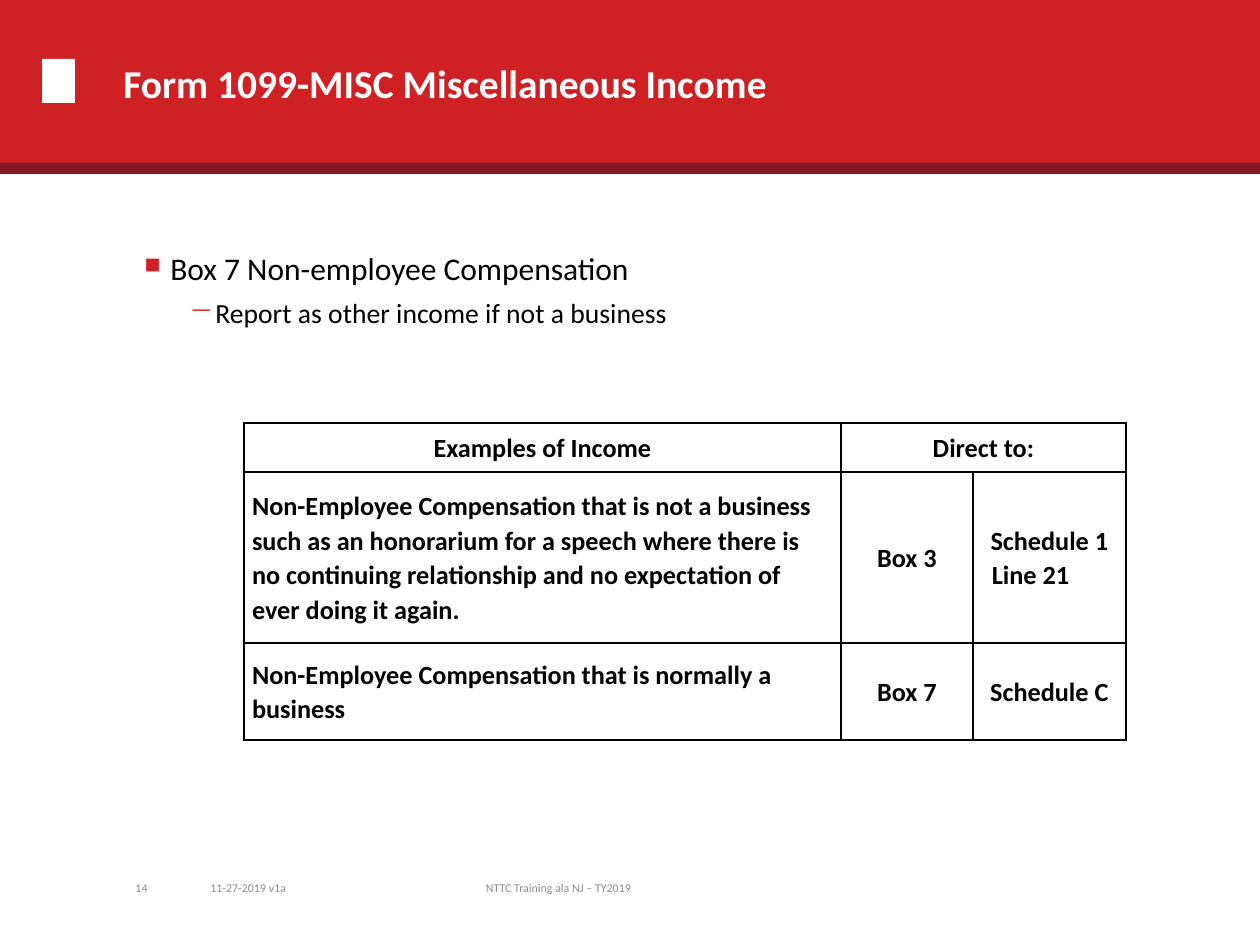
from dataclasses import dataclass

from lxml import etree
from pptx import Presentation
from pptx.dml.color import RGBColor
from pptx.enum.shapes import MSO_SHAPE
from pptx.enum.text import MSO_ANCHOR, PP_ALIGN
from pptx.oxml.ns import qn
from pptx.util import Emu, Pt

RECTANGLE = MSO_SHAPE.RECTANGLE
MIDDLE = MSO_ANCHOR.MIDDLE
TOP = MSO_ANCHOR.TOP
LEFT = PP_ALIGN.LEFT
CENTER = PP_ALIGN.CENTER
RIGHT = PP_ALIGN.RIGHT
EMU_PER_PIXEL = 914400 / 126
BLANK_LAYOUT = 6


@dataclass(frozen=True)
class Theme:
    font: str = "Calibri"
    red: str = "CF2124"
    dark_red: str = "841721"
    white: str = "FFFFFF"
    black: str = "000000"
    gray: str = "8C8C8C"
    title_size: float = 22.5
    body_size: float = 18
    detail_size: float = 15.8
    table_size: float = 15
    footer_size: float = 6.8
    table_line_spacing: float = 1.07
    border_width: float = 1


def px(value):
    return Emu(round(value * EMU_PER_PIXEL))


def set_all(target, values):
    for name, value in values.items():
        setattr(target, name, value)


def add_element(parent, tag, **attributes):
    values = {name: str(value) for name, value in attributes.items()}
    return etree.SubElement(parent, qn(tag), values)


class SlideBuilder:
    def __init__(self, slide, theme):
        self.slide = slide
        self.theme = theme

    def rectangle(self, box, color):
        shape = self.slide.shapes.add_shape(RECTANGLE, *map(px, box))
        shape.shadow.inherit = False
        shape.fill.solid()
        shape.fill.fore_color.rgb = RGBColor.from_string(color)
        shape.line.fill.background()

    def text_frame(self, box, anchor=MIDDLE):
        frame = self.slide.shapes.add_textbox(*map(px, box)).text_frame
        set_all(frame, {"word_wrap": True, "vertical_anchor": anchor})
        return frame

    def style_text(self, paragraph, text, size, color, bold=False, **formats):
        paragraph.text = text
        set_all(paragraph, formats)
        set_all(paragraph.font, {"name": self.theme.font, "size": Pt(size), "bold": bold})
        paragraph.font.color.rgb = RGBColor.from_string(color)

    def label(self, box, text, size, color, bold=False, alignment=LEFT):
        paragraph = self.text_frame(box).paragraphs[0]
        self.style_text(paragraph, text, size, color, bold, alignment=alignment)

    def indent(self, paragraph, margin, hanging=0):
        properties = paragraph._p.get_or_add_pPr()
        properties.set("marL", str(px(margin)))
        properties.set("indent", str(px(-hanging)))
        return properties

    def bullets(self, box, items):
        frame = self.text_frame(box, TOP)
        for index, (text, size, level, margin, character, percent, space) in enumerate(items):
            paragraph = frame.add_paragraph() if index else frame.paragraphs[0]
            properties = self.indent(paragraph, margin, 26)
            color = add_element(properties, "a:buClr")
            add_element(color, "a:srgbClr", val=self.theme.red)
            add_element(properties, "a:buSzPct", val=percent * 1000)
            add_element(properties, "a:buChar", char=character)
            self.style_text(paragraph, text, size, self.theme.black,
                            level=level, space_before=Pt(space))

    def border(self, cell):
        properties = cell._tc.get_or_add_tcPr()
        for side in ("a:lnL", "a:lnR", "a:lnT", "a:lnB"):
            line = add_element(properties, side, w=Pt(self.theme.border_width))
            fill = add_element(line, "a:solidFill")
            add_element(fill, "a:srgbClr", val=self.theme.black)

    def cell(self, cell, lines, alignment):
        self.border(cell)
        cell.fill.background()
        set_all(cell, {"vertical_anchor": MIDDLE, "margin_left": px(8), "margin_right": px(8),
                       "margin_top": 0, "margin_bottom": 0})
        for index, text in enumerate(lines):
            paragraph = cell.text_frame.add_paragraph() if index else cell.text_frame.paragraphs[0]
            if index:
                self.indent(paragraph, 11)
            self.style_text(paragraph, text, self.theme.table_size, self.theme.black, True,
                            alignment=LEFT if index else alignment,
                            line_spacing=self.theme.table_line_spacing)

    def table(self, left, top, widths, heights, rows):
        frame = self.slide.shapes.add_table(len(heights), len(widths), px(left), px(top),
                                            px(sum(widths)), px(sum(heights)))
        table = frame.table
        set_all(table, {"first_row": False, "horz_banding": False})
        for column, width in zip(table.columns, widths):
            column.width = px(width)
        for row, height in zip(table.rows, heights):
            row.height = px(height)
        table.cell(0, 1).merge(table.cell(0, 2))
        for row_index, row in enumerate(rows):
            for column_index, lines in enumerate(row):
                alignment = LEFT if row_index and not column_index else CENTER
                self.cell(table.cell(row_index, column_index), lines, alignment)


def main():
    theme = Theme()
    presentation = Presentation()
    set_all(presentation, {"slide_width": px(1260), "slide_height": px(945)})
    slide = presentation.slides.add_slide(presentation.slide_layouts[BLANK_LAYOUT])
    builder = SlideBuilder(slide, theme)

    builder.rectangle((0, 0, 1260, 166), theme.red)
    builder.rectangle((42, 59, 33, 44), theme.white)
    builder.rectangle((0, 163, 1260, 11), theme.dark_red)
    builder.label((111, 4, 1008, 158), "Form 1099-MISC Miscellaneous Income",
                  theme.title_size, theme.white, bold=True)
    builder.bullets((132, 243, 1008, 554), [
        ("Box 7 Non-employee Compensation", theme.body_size, 0, 26, "■", 70, 0),
        ("Report as other income if not a business", theme.detail_size, 1, 71, "─", 110, 5.1),
    ])
    builder.table(244, 423, (597, 132, 153), (49, 171, 97), [
        [["Examples of Income"], ["Direct to:"], []],
        [["Non-Employee Compensation that is not a business such as an honorarium "
          "for a speech where there is no continuing relationship and no expectation "
          "of ever doing it again."], ["Box 3"], ["Schedule 1", "Line 21"]],
        [["Non-Employee Compensation that is normally a business"],
         ["Box 7"], ["Schedule C"]],
    ])
    footers = [
        (63, 97, "14", RIGHT),
        (198, 137, "11-27-2019 v1a", LEFT),
        (359, 399, "NTTC Training ala NJ – TY2019", CENTER),
    ]
    for left, width, text, alignment in footers:
        builder.label((left, 863, width, 50), text, theme.footer_size, theme.gray,
                      alignment=alignment)

    presentation.save("out.pptx")


if __name__ == "__main__":
    main()
